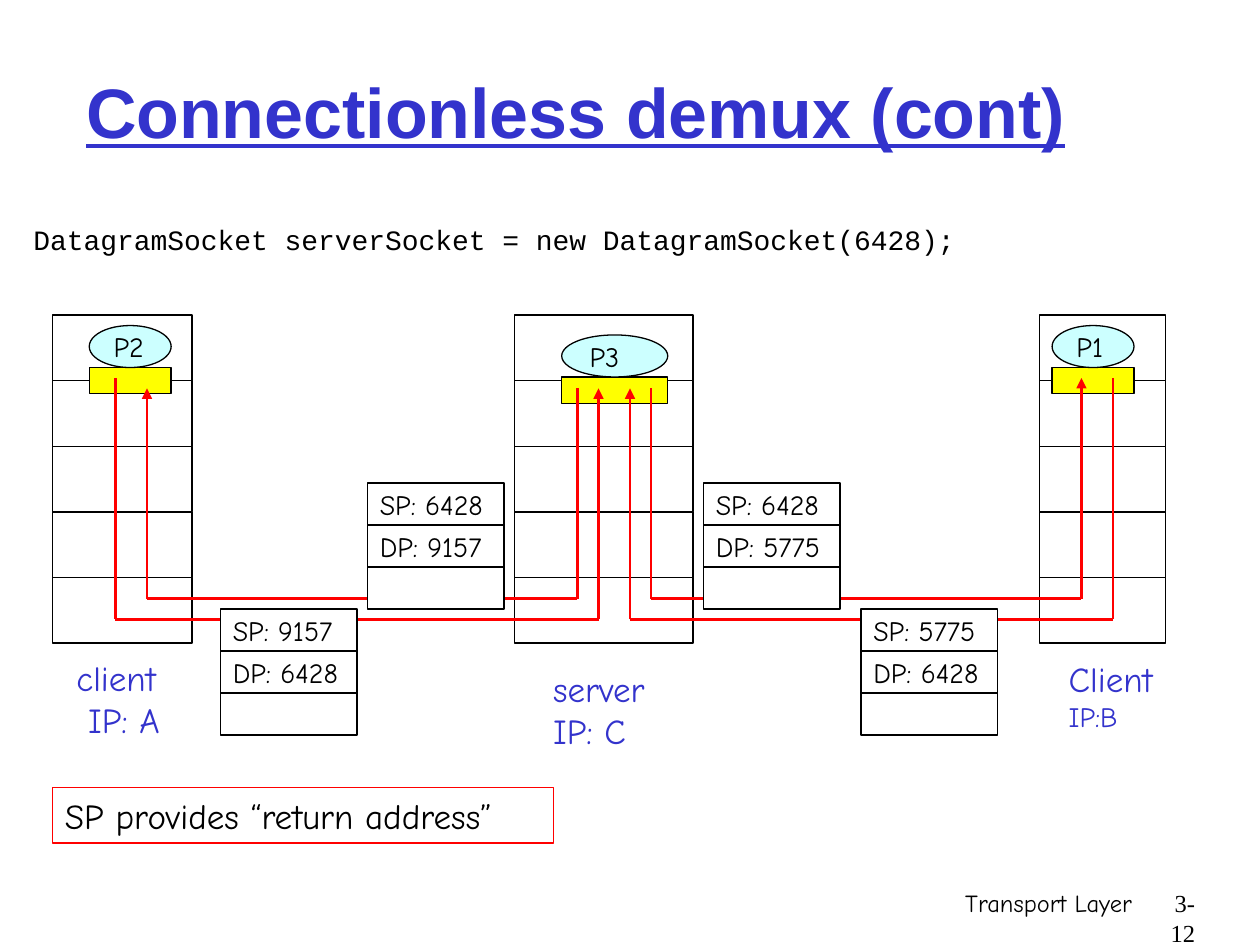
from lxml.etree import SubElement
from pptx import Presentation
from pptx.dml.color import RGBColor
from pptx.enum.shapes import MSO_CONNECTOR as Link, MSO_SHAPE as Kind
from pptx.enum.text import MSO_ANCHOR as Anchor, PP_ALIGN as Align
from pptx.oxml.ns import qn
from pptx.util import Inches, Pt

BLACK = RGBColor(0, 0, 0)
WHITE = RGBColor(255, 255, 255)
BLUE = RGBColor(0x33, 0x33, 0xCC)
RED = RGBColor(255, 0, 0)
YELLOW = RGBColor(255, 255, 0)
AQUA = RGBColor(0xCC, 255, 255)
FONT = "Comic Neue"

# All lengths are in grid units, 12 to the inch.
TITLE = "Connectionless demux (cont)"
CODE = "DatagramSocket serverSocket = new DatagramSocket(6428);"
NOTE = "SP provides “return address”"
TOP, ROW, ROWS = 30, 6.25, 5

# host left and width; process name, left, top and width
HOSTS = [
    (5, 13.3, "P2", 8.5, 31, 7.8),
    (99, 12, "P1", 100.2, 31, 7.8),
    (49, 17, "P3", 53.5, 31.9, 10.1),
]
# label lines with sizes; left, top, width, height
LABELS = [
    ([("client", 20), (" IP: A", 20)], (6.1, 61.9, 11.4, 9.2)),
    ([("Client", 20), ("IP:B", 16)], (100.6, 62, 11.4, 8.4)),
    ([("server", 20), ("IP: C", 20)], (51.5, 63, 12.5, 9.2)),
]
# sender x and y, floor y, receiver x and y
FLOWS = [
    (11, 36, 59, 57, 37),
    (55, 37, 57, 14, 37),
    (106, 36, 59, 60, 37),
    (62, 37, 57, 103, 36),
]
# left, top, source port, destination port
PACKETS = [
    (35, 46, 6428, 9157),
    (21, 58, 9157, 6428),
    (67, 46, 6428, 5775),
    (82, 58, 5775, 6428),
]

deck = Presentation()
deck.slide_width, deck.slide_height = Inches(10), Inches(7.5)
slide = deck.slides.add_slide(deck.slide_layouts[5])
shapes = slide.shapes


def grid(*nums):
    return [Inches(n / 12) for n in nums]


def write(shape, lines, color=BLACK, font=FONT, align=Align.LEFT,
          wrap=False, anchor=Anchor.TOP):
    """Fill a shape with (text, size) lines."""
    frame = shape.text_frame
    frame.text = "\n".join(text for text, size in lines)
    frame.word_wrap = wrap
    frame.vertical_anchor = anchor
    for para, (text, size) in zip(frame.paragraphs, lines):
        para.alignment = align
        for run in para.runs:
            run.font.size = Pt(size)
            run.font.name = font
            run.font.color.rgb = color


def label(spot, lines, **style):
    box = shapes.add_textbox(*grid(*spot))
    write(box, lines, **style)
    return box


def block(kind, spot, fill=WHITE, line=BLACK, text="", size=16):
    shape = shapes.add_shape(kind, *grid(*spot))
    shape.shadow.inherit = False
    if fill is None:
        shape.fill.background()
    else:
        shape.fill.solid()
        shape.fill.fore_color.rgb = fill
    shape.line.color.rgb = line
    shape.line.width = Pt(0.75)
    if text:
        write(shape, [(text, size)], anchor=Anchor.MIDDLE)


def wire(start, end, arrow=False):
    line = shapes.add_connector(Link.STRAIGHT, *grid(*start, *end))
    line.line.color.rgb = RED
    line.line.width = Pt(1.5)
    if arrow:
        SubElement(line.line._get_or_add_ln(), qn("a:tailEnd"), type="triangle")
    SubElement(line._element.spPr, qn("a:effectLst"))


title = shapes.title
title.left, title.top, title.width, title.height = grid(7, 3, 102, 15)
write(title, [(TITLE, 40)], color=BLUE, font="Arial", wrap=True,
      anchor=Anchor.MIDDLE)
head = title.text_frame.paragraphs[0].runs[0].font
head.bold = head.underline = True

code = label((2, 21, 114, 8), [(CODE, 16)], font="Courier New", wrap=True)
para = code.text_frame.paragraphs[0]
para.line_spacing = 0.9
para.space_before = Pt(3.2)

label((71, 84, 38, 6), [("Transport Layer", 14)], align=Align.RIGHT, wrap=True)
label((109, 84, 6, 6), [("3-12", 14)], font="Times New Roman",
      align=Align.RIGHT, wrap=True)

for left, width, name, x, y, wide in HOSTS:
    for i in range(ROWS):
        block(Kind.RECTANGLE, (left, TOP + i * ROW, width, ROW))
    block(Kind.RECTANGLE, (x, y + 4, wide, 2.5), YELLOW)
    block(Kind.OVAL, (x, y, wide, 4), AQUA, text=name)

for lines, spot in LABELS:
    label(spot, lines, color=BLUE)

for x, y, floor, goal, end in FLOWS:
    wire((x, y), (x, floor))
    wire((x, floor), (goal, floor))
    wire((goal, floor), (goal, end), arrow=True)

for left, top, source, dest in PACKETS:
    for i, text in enumerate([f"SP: {source}", f"DP: {dest}", ""]):
        block(Kind.RECTANGLE, (left, top + 4 * i, 13, 4), text=text)

block(Kind.RECTANGLE, (5, 75, 47.7, 5.3), None, RED, NOTE, 20)

deck.save("out.pptx")
